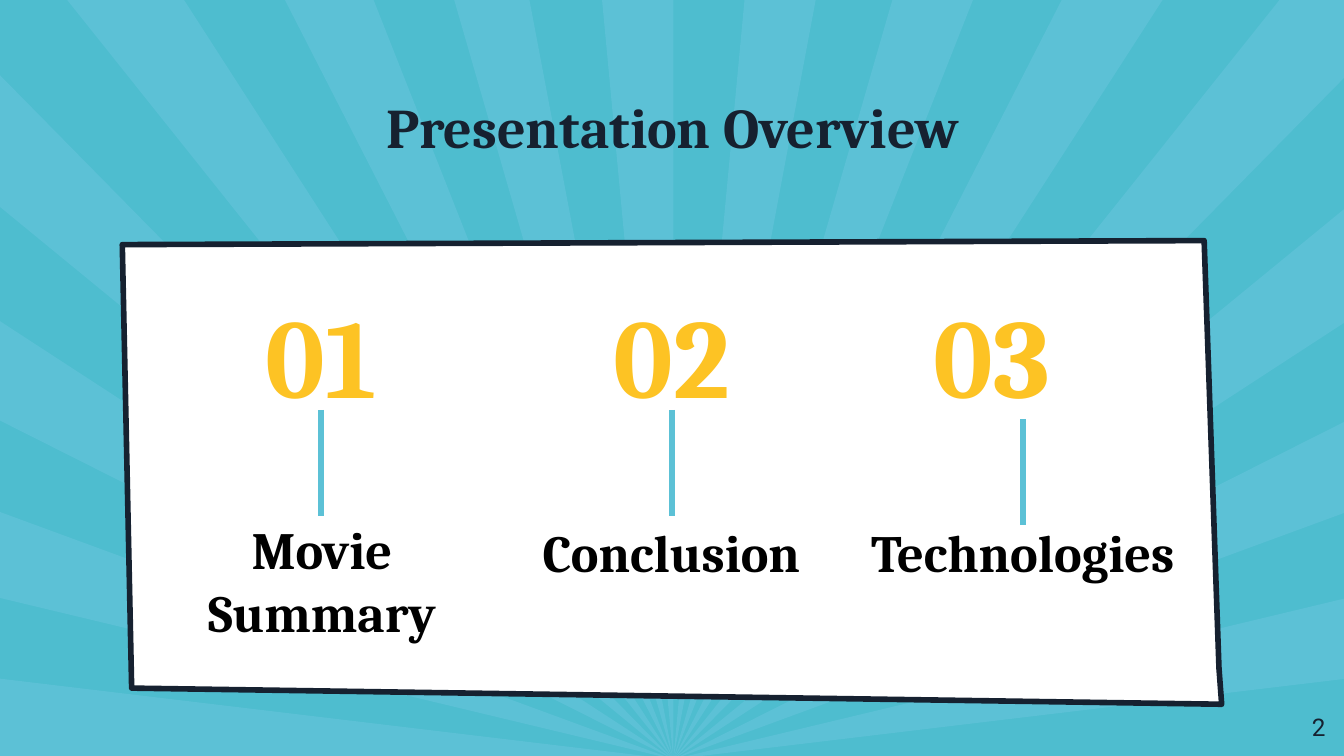
from lxml.etree import SubElement
from pptx import Presentation
from pptx.dml.color import RGBColor
from pptx.enum.shapes import MSO_CONNECTOR
from pptx.enum.text import MSO_ANCHOR, PP_ALIGN
from pptx.oxml.ns import qn
from pptx.util import Inches, Pt

SKY = RGBColor(0x4E, 0xBD, 0xCF)
RAY = RGBColor(0x5C, 0xC1, 0xD6)
INK = RGBColor(0x16, 0x21, 0x30)
GOLD = RGBColor(0xFD, 0xC3, 0x24)
WHITE = RGBColor(0xFF, 0xFF, 0xFF)
BLACK = RGBColor(0x00, 0x00, 0x00)


def add_polygon(slide, left, top, corners, color):
    points = [(Inches(left + x), Inches(top + y)) for x, y in corners]
    builder = slide.shapes.build_freeform(*points[0])
    builder.add_line_segments(points[1:], close=True)
    polygon = builder.convert_to_shape()
    polygon.shadow.inherit = False
    polygon.fill.solid()
    polygon.fill.fore_color.rgb = color
    polygon.line.fill.background()
    return polygon


def add_text(slide, left, top, width, height, text, size, color,
             align=PP_ALIGN.CENTER, font="Cambria", bold=True,
             anchor=MSO_ANCHOR.TOP):
    box = slide.shapes.add_textbox(
        Inches(left), Inches(top), Inches(width), Inches(height))
    frame = box.text_frame
    frame.word_wrap = True
    frame.vertical_anchor = anchor
    frame.margin_left = frame.margin_right = Inches(0.1)
    frame.margin_top = frame.margin_bottom = Inches(0.1)
    paragraph = frame.paragraphs[0]
    paragraph.alignment = align
    run = paragraph.add_run()
    run.text = text
    run.font.name = font
    run.font.size = Pt(size)
    run.font.bold = bold
    run.font.color.rgb = color


def add_sunburst(slide, left, top, width, height):
    center = (width / 2, height)
    left_rays = [(0.56, 1.54), (2.39, 3.13), (3.81, 4.45), (5.05, height)]
    top_rays = [(0.5, 1.37), (2.12, 2.78), (3.38, 3.94), (4.48, 5.01),
                (5.54, 6.07), (6.64, 7.24), (7.9, 8.65)]
    right_rays = [(1.54, 2.39), (3.13, 3.81), (4.45, 5.05)]
    edges = [[(0, start), (0, end)] for start, end in left_rays]
    edges += [[(start, 0), (end, 0)] for start, end in top_rays]
    edges += [[(width, start), (width, end)] for start, end in right_rays]
    edges.append([(9.52, 0), (width, 0), (width, 0.56)])
    for edge in edges:
        add_polygon(slide, left, top, edge + [center], RAY)


def add_divider(slide, x, top, length):
    divider = slide.shapes.add_connector(
        MSO_CONNECTOR.STRAIGHT,
        Inches(x), Inches(top), Inches(x), Inches(top + length))
    divider.line.color.rgb = RAY
    divider.line.width = Pt(3)
    SubElement(divider.line._get_or_add_ln().getparent(), qn("a:effectLst"))


def add_overview_card(slide, left, top):
    corners = [(8.05, 0), (0, 0.03), (0.07, 3.33), (8.18, 3.45), (8.16, 3.18)]
    card = add_polygon(slide, left, top, corners, WHITE)
    card.line.color.rgb = INK
    card.line.width = Pt(3)
    SubElement(card.line._get_or_add_ln(), qn("a:round"))

    numbers = [
        ("01", 0.78, 1.4, 1.33, PP_ALIGN.CENTER),
        ("02", 3.39, 1.4, 1.23, PP_ALIGN.CENTER),
        ("03", 5.94, 1.5, 1.29, PP_ALIGN.LEFT),
    ]
    labels = [
        ("Movie Summary", 0.21, 1.96, 2.55, 1.05),
        ("Conclusion", 2.81, 1.98, 2.55, 0.61),
        ("Technologies", 5.18, 1.98, 3.04, 0.61),
    ]
    dividers = [(1.48, 1.26), (4.09, 1.26), (6.7, 1.33)]
    for label, x, y, width, height in labels:
        add_text(slide, left + x, top + y, width, height, label, 28, BLACK)
    for number, x, width, height, align in numbers:
        add_text(slide, left + x, top + 0.24, width, height,
                 number, 60, GOLD, align)
    for x, y in dividers:
        add_divider(slide, left + x, top + y, 0.79)


def add_title(slide, left, top, width, height):
    add_text(slide, left, top, width, height, "Presentation Overview", 30, INK)


def add_page_number(slide, left, top, width, height):
    add_text(slide, left, top, width, height, "2", 13, INK, PP_ALIGN.RIGHT,
             "Roboto", False, MSO_ANCHOR.MIDDLE)


def main():
    presentation = Presentation()
    presentation.slide_width = Inches(10)
    presentation.slide_height = Inches(10) * 9 // 16
    slide = presentation.slides.add_slide(presentation.slide_layouts[6])
    slide.background.fill.solid()
    slide.background.fill.fore_color.rgb = SKY
    add_sunburst(slide, 0, 0, 10.02, 5.65)
    add_overview_card(slide, 0.91, 1.79)
    add_title(slide, 2.22, 0.59, 5.57, 1.05)
    add_page_number(slide, 9.36, 5.19, 0.6, 0.43)
    presentation.save("out.pptx")


if __name__ == "__main__":
    main()
